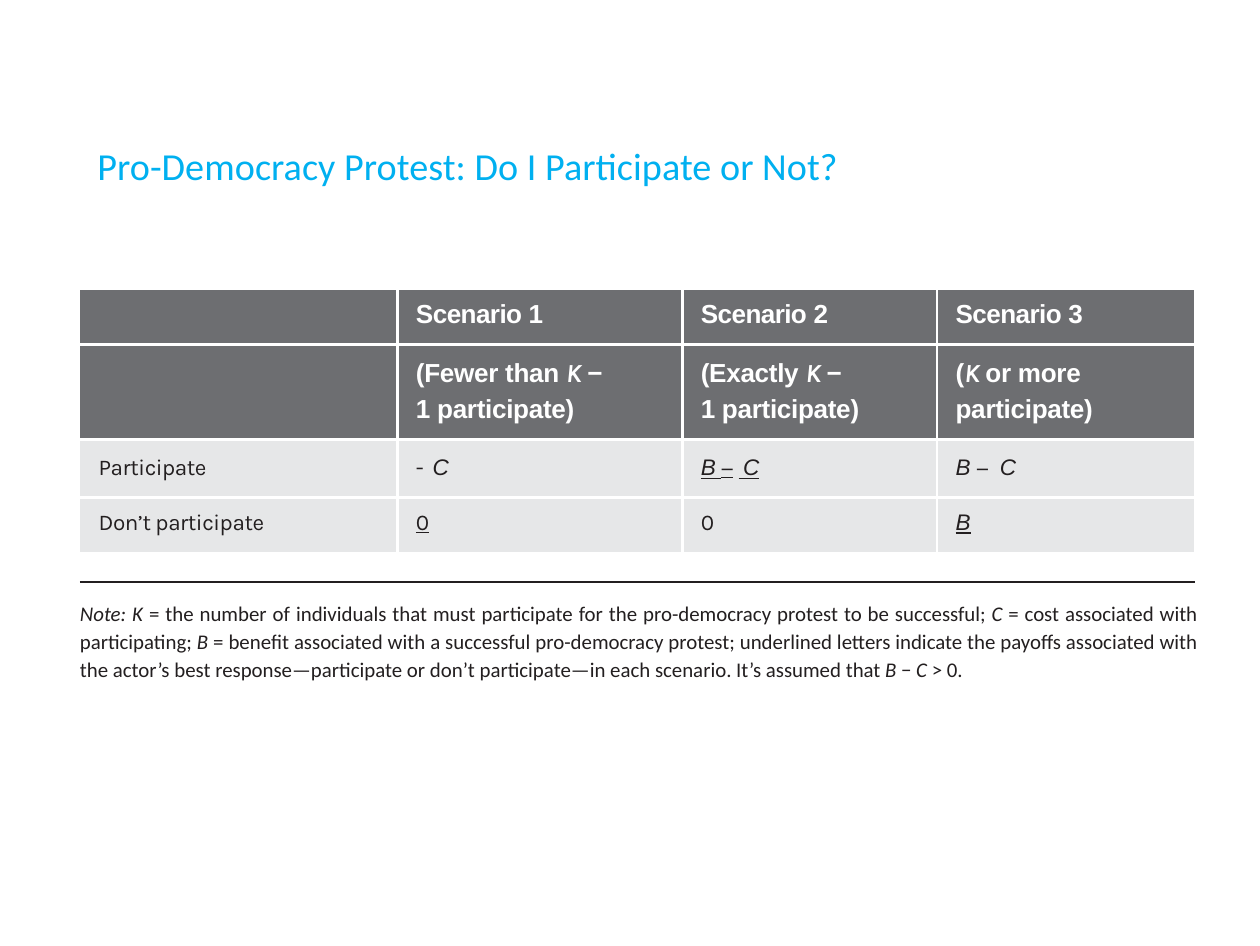
from lxml.etree import SubElement
from pptx import Presentation
from pptx.dml.color import RGBColor
from pptx.enum.shapes import MSO_CONNECTOR as Conn
from pptx.enum.text import MSO_ANCHOR as Anchor, MSO_AUTO_SIZE as Fit, PP_ALIGN as Align
from pptx.oxml.ns import qn
from pptx.util import Inches, Pt

WHITE, DARK, PALE, INK, BLUE = "FFFFFF", "6D6E71", "E6E7E8", "231F20", "00B0F0"
LEFT, RIGHT = 0.32, 4.78
COLS = [1.27, 1.14, 1.02, 1.03]
ROWS = [0.22, 0.38, 0.23, 0.22]
TOPS = [0.04, 0.03, 0.06, 0.05]
GAPS = [3.1, 1.9, 4.5, 4]

VAR = dict(face="Arial", italic=True, track=-0.5)
BEST = dict(VAR, under=True)
KAY = ("K ", dict(face="Karla", italic=True, track=-0.1))
MINUS = dict(track=-0.3)
TIGHT = dict(track=-0.1)
DASH = dict(track=0.9)


def head(num):
    return [("Scenario ", dict(track=-0.2)), (num, {})]


def limit(word):
    return [(word, TIGHT), KAY, ("−", MINUS), ("\n", {}), ("1 participate)", TIGHT)]


CELLS = [
    [[], head("1"), head("2"), head("3")],
    [[], limit("(Fewer than "), limit("(Exactly "),
     [("(", {}), KAY, ("or more participate)", TIGHT)]],
    [[("Participate", TIGHT)],
     [("- ", dict(track=0.5)), ("C", VAR)],
     [("B ", dict(BEST, track=-0.2)), ("−", dict(under=True, track=1.6)), (" C", BEST)],
     [("B ", dict(VAR, track=-0.1)), ("− ", DASH), ("C", VAR)]],
    [[("Don’t participate", TIGHT)],
     [("0", dict(under=True))], [("0", {})], [("B", BEST)]],
]

SLANT = dict(italic=True)
NOTE = [
    ("Note: K ", SLANT),
    ("= the number of individuals that must participate for the "
     "pro-democracy protest to be successful; ", {}),
    ("C ", SLANT), ("= cost associated with participating; ", {}),
    ("B ", SLANT),
    ("= benefit associated with a successful pro-democracy protest; underlined "
     "letters indicate the payoffs associated with the actor’s best "
     "response—participate or don’t participate—in each scenario. "
     "It’s assumed that ", {}),
    ("B ", SLANT), ("− ", {}), ("C ", SLANT), ("> 0.", {}),
]


def tint(code):
    return RGBColor.from_string(code)


def write(par, text, face="Calibri", size=6, color=INK, bold=False,
          italic=False, under=False, track=0):
    """Add one formatted run, or a line break for a newline."""
    if text == "\n":
        par.add_line_break()
        return
    run = par.add_run()
    run.text = text
    font = run.font
    font.name, font.size = face, Pt(size)
    font.bold, font.italic, font.underline = bold, italic, under
    font.color.rgb = tint(color)
    if track:
        font._element.set("spc", str(round(track * 100)))


def edge(cell, side, shown):
    """Draw a white rule on one side of a cell, or clear that side."""
    props = cell._tc.get_or_add_tcPr()
    line = SubElement(props, qn(f"a:ln{side}"), w=str(Pt(1)))
    if shown:
        fill = SubElement(line, qn("a:solidFill"))
        SubElement(fill, qn("a:srgbClr"), val=WHITE)
    else:
        SubElement(line, qn("a:noFill"))


class Page:
    def __init__(self):
        self.deck = Presentation()
        self.deck.slide_width, self.deck.slide_height = Pt(363), Pt(272.5)
        self.slide = self.deck.slides.add_slide(self.deck.slide_layouts[5])
        self.shapes = self.slide.shapes

    def frame(self, shape, box, align, space=1.0):
        """Place a text shape and return its first paragraph."""
        shape.left, shape.top, shape.width, shape.height = map(Inches, box)
        body = shape.text_frame
        body.word_wrap, body.auto_size = True, Fit.NONE
        body.vertical_anchor = Anchor.TOP
        body.margin_left = body.margin_top = Inches(0.01)
        body.margin_right = body.margin_bottom = 0
        par = body.paragraphs[0]
        par.alignment, par.line_spacing, par.space_before = align, space, Pt(0.9)
        return par

    def title(self, text, box):
        par = self.frame(self.shapes.title, box, Align.LEFT)
        write(par, text, size=11, color=BLUE)

    def note(self, runs, box):
        shape = self.shapes.add_textbox(*map(Inches, box))
        par = self.frame(shape, box, Align.JUSTIFY, 1.12)
        for text, form in runs:
            write(par, text, **form)

    def rule(self, top):
        line = self.shapes.add_connector(
            Conn.STRAIGHT, Inches(LEFT), Inches(top), Inches(RIGHT), Inches(top))
        line.line.color.rgb, line.line.width = tint(INK), Pt(0.5)
        SubElement(line._element.spPr, qn("a:effectLst"))

    def table(self, top):
        grid = self.shapes.add_table(
            len(ROWS), len(COLS), Inches(LEFT), Inches(top),
            Inches(sum(COLS)), Inches(sum(ROWS))).table
        grid.horz_banding = False
        for col, width in zip(grid.columns, COLS):
            col.width = Inches(width)
        for row, high in zip(grid.rows, ROWS):
            row.height = Inches(high)
        for r, line in enumerate(CELLS):
            for c, runs in enumerate(line):
                self.cell(grid.cell(r, c), r, c, runs)

    def cell(self, cell, r, c, runs):
        top = r < 2
        inner = dict(L=c > 0, R=c < len(COLS) - 1, T=r > 0, B=r < len(ROWS) - 1)
        for side, shown in inner.items():
            edge(cell, side, shown)
        cell.fill.solid()
        cell.fill.fore_color.rgb = tint(DARK if top else PALE)
        cell.margin_left, cell.margin_top = Pt(5.4), Inches(TOPS[r])
        cell.margin_right = cell.margin_bottom = 0
        par = cell.text_frame.paragraphs[0]
        par.space_before = Pt(GAPS[r])
        par.line_spacing = 1.2 if r == 1 else 1.0
        base = (dict(face="Arial", size=7.5, color=WHITE, bold=True) if top
                else dict(face="Karla", size=6.5))
        for text, form in runs:
            write(par, text, **{**base, **form})
        if not runs:
            SubElement(par._p, qn("a:endParaRPr"), sz="750")


def main():
    page = Page()
    page.title("Pro-Democracy Protest: Do I Participate or Not?",
               (0.38, 0.56, 3.17, 0.2))
    page.rule(2.33)
    page.table(1.16)
    page.note(NOTE, (0.31, 2.38, 4.48, 0.35))
    page.deck.save("out.pptx")


if __name__ == "__main__":
    main()
